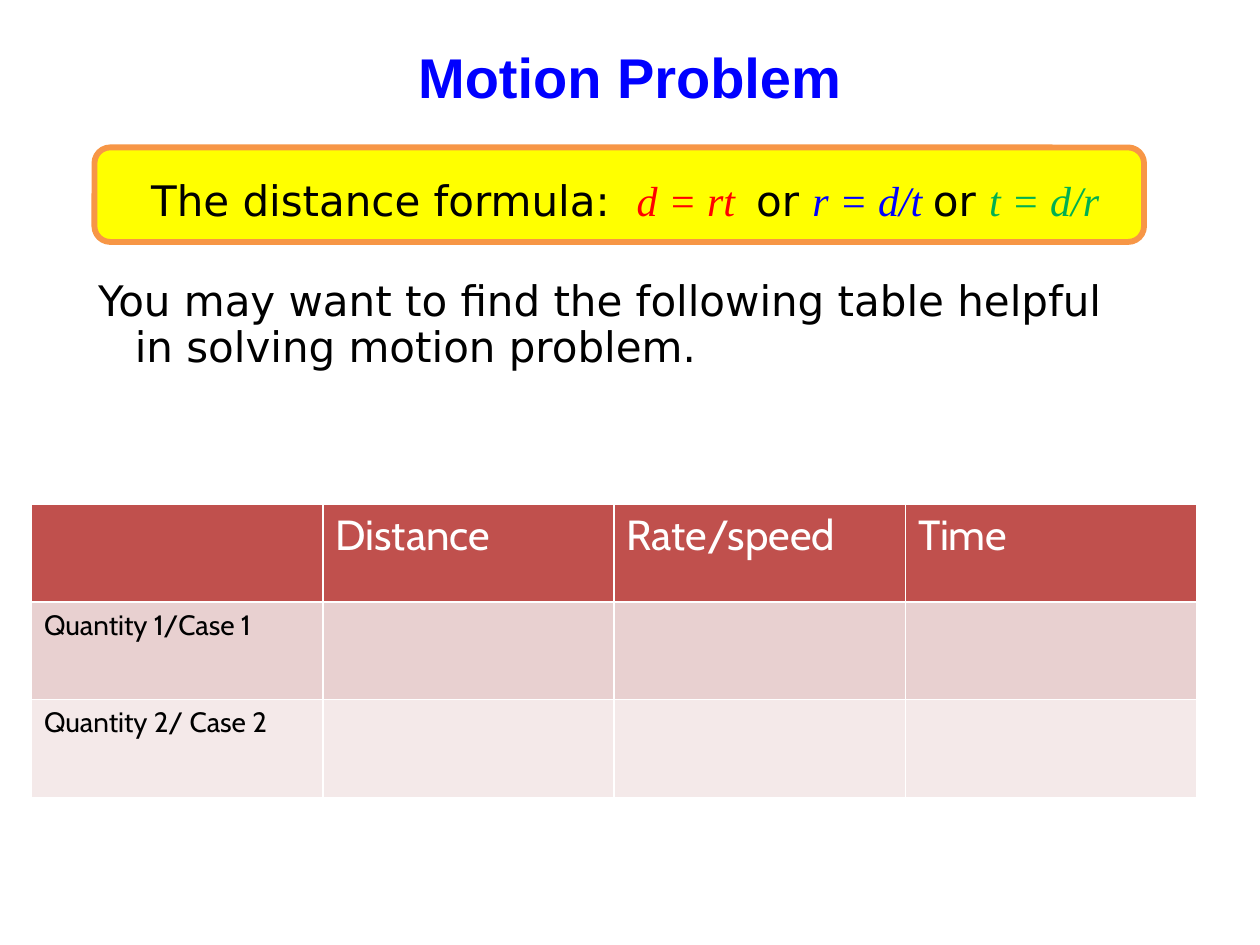
"""Build the motion problem slide with its formula box and table."""
from pptx import Presentation
from pptx.dml.color import RGBColor
from pptx.enum.shapes import MSO_SHAPE as Shape
from pptx.enum.text import MSO_ANCHOR as Anchor, PP_ALIGN as Align
from pptx.util import Inches, Pt


def paint(fill, color):
    fill.solid()
    fill.fore_color.rgb = RGBColor.from_string(color)


def write(para, text, color, **form):
    run = para.add_run()
    run.text = text
    paint(run.font.fill, color)
    for key, value in form.items():
        setattr(run.font, key, value)


deck = Presentation()
deck.slide_width, deck.slide_height = Inches(10), Inches(7.5)
slide = deck.slides.add_slide(deck.slide_layouts[6])
shapes = slide.shapes

panel = shapes.add_shape(Shape.ROUNDED_RECTANGLE, Inches(0.75), Inches(1.17),
                         Inches(8.33), Inches(0.75))
panel.shadow.inherit = False
paint(panel.fill, "FFFF00")
paint(panel.line.fill, "F79646")
panel.line.width = Pt(3.35)

title = shapes.add_textbox(Inches(0.5), Inches(0.3), Inches(9), Inches(0.62)).text_frame
title.word_wrap = True
title.vertical_anchor = Anchor.BOTTOM
head = title.paragraphs[0]
head.alignment = Align.CENTER
write(head, "Motion Problem", "0000FF", name="Arial", size=Pt(32), bold=True)

body = shapes.add_textbox(Inches(0.58), Inches(1.33), Inches(8.5), Inches(2.5)).text_frame
frame = {"word_wrap": True, "margin_left": Inches(0.2), "margin_right": Inches(0.1),
         "margin_top": Inches(0.1), "margin_bottom": Inches(0.05)}
for key, value in frame.items():
    setattr(body, key, value)

plain = {"name": "DejaVu Sans", "size": Pt(24), "italic": False}
math = {"name": "Times New Roman", "size": Pt(24), "italic": True}
rule = [("The distance formula:  ", "000000", plain), ("d = rt  ", "FF0000", math),
        ("or ", "000000", plain), ("r = d/t ", "0000FF", math),
        ("or ", "000000", plain), ("t = d/r", "00B050", math)]
hint = [("You may want to find the following table helpful in solving motion problem.",
         "000000", plain)]
lines = [(rule, 0.42, 0, 2.5), (hint, 0.29, -0.29, 31.5)]
for i, (parts, left, first, gap) in enumerate(lines):
    para = body.add_paragraph() if i else body.paragraphs[0]
    para.line_spacing = 0.9
    para.space_before = Pt(gap)
    props = para._p.get_or_add_pPr()
    props.set("marL", str(Inches(left)))
    props.set("indent", str(Inches(first)))
    for text, color, form in parts:
        write(para, text, color, **form)

rows = [(["", "Distance", "Rate/speed", "Time"], "C0504D", "FFFFFF", 24),
        (["Quantity 1/Case 1", "", "", ""], "E8D0D0", "000000", 16),
        (["Quantity 2/ Case 2", "", "", ""], "F4E9E9", "000000", 16)]
table = shapes.add_table(3, 4, Inches(0.25), Inches(4), Inches(9.25), Inches(2.33)).table
for r, (words, back, ink, size) in enumerate(rows):
    for c, word in enumerate(words):
        cell = table.cell(r, c)
        paint(cell.fill, back)
        if word:
            write(cell.text_frame.paragraphs[0], word, ink,
                  name="Cabin", size=Pt(size), bold=False)

deck.save("out.pptx")
